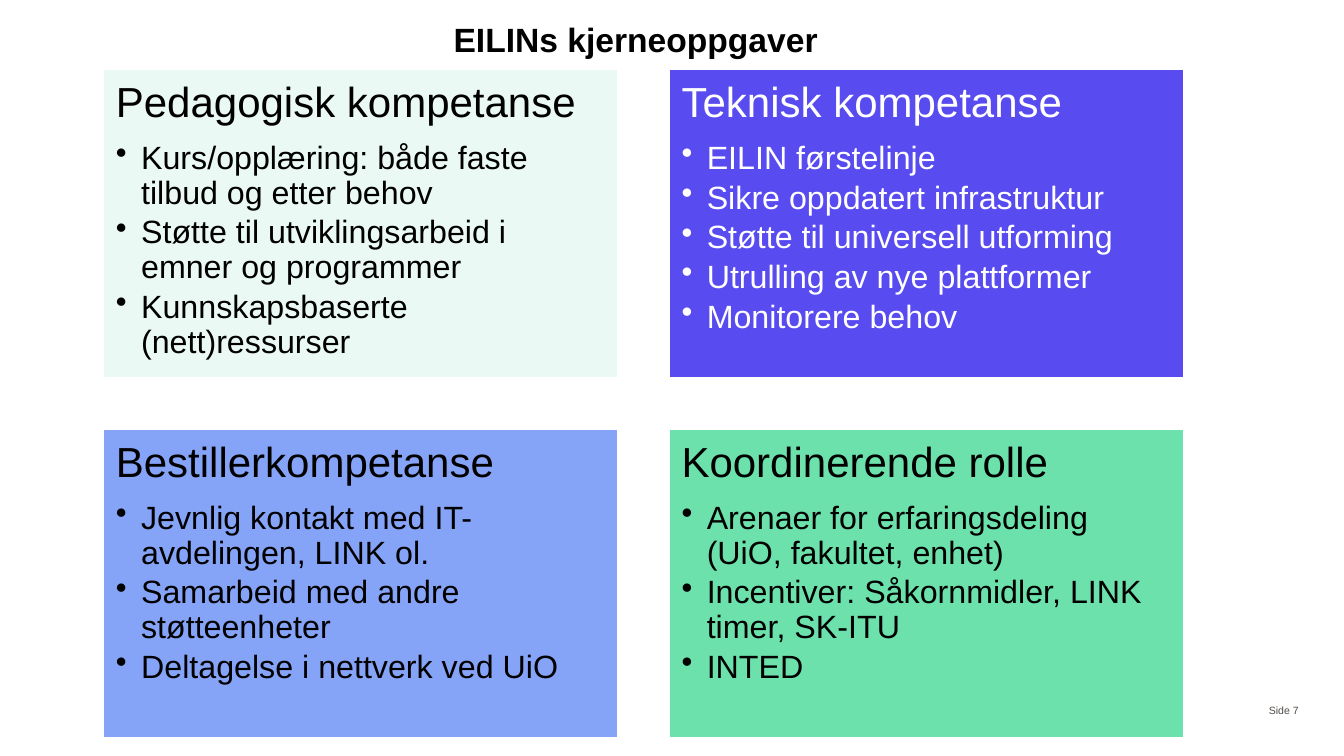
"""Build the slide showing the four core tasks of EILIN."""
import pptx
import pptx.util
import pptx.dml.color
import pptx.enum.shapes
import pptx.enum.text
import pptx.oxml.ns
from lxml import etree

Inches, Pt = pptx.util.Inches, pptx.util.Pt
RGBColor = pptx.dml.color.RGBColor
ALIGN = pptx.enum.text.PP_ALIGN
ANCHOR = pptx.enum.text.MSO_ANCHOR
RECTANGLE = pptx.enum.shapes.MSO_SHAPE.RECTANGLE

BLACK = RGBColor(0x00, 0x00, 0x00)
WHITE = RGBColor(0xFF, 0xFF, 0xFF)
GREY = RGBColor(0x52, 0x4B, 0x48)
MINT = RGBColor(0xEA, 0xF9, 0xF3)
VIOLET = RGBColor(0x58, 0x4B, 0xF0)
BLUE = RGBColor(0x86, 0xA4, 0xF7)
GREEN = RGBColor(0x6C, 0xE1, 0xAB)

HEADLINE = "EILINs kjerneoppgaver"
PAGE_LABEL = "Side 7"
TASKS = [
    ("Pedagogisk kompetanse", MINT, BLACK, [
        "Kurs/opplæring: både faste tilbud og etter behov",
        "Støtte til utviklingsarbeid i emner og programmer",
        "Kunnskapsbaserte (nett)ressurser",
    ]),
    ("Teknisk kompetanse", VIOLET, WHITE, [
        "EILIN førstelinje",
        "Sikre oppdatert infrastruktur",
        "Støtte til universell utforming",
        "Utrulling av nye plattformer",
        "Monitorere behov",
    ]),
    ("Bestillerkompetanse", BLUE, BLACK, [
        "Jevnlig kontakt med IT-avdelingen, LINK ol.",
        "Samarbeid med andre støtteenheter",
        "Deltagelse i nettverk ved UiO",
    ]),
    ("Koordinerende rolle", GREEN, BLACK, [
        "Arenaer for erfaringsdeling (UiO, fakultet, enhet)",
        "Incentiver: Såkornmidler, LINK timer, SK-ITU",
        "INTED",
    ]),
]

LEFT, TOP = 1.03, 0.69
CARD_WIDTH, CARD_HEIGHT, GAP = 5.1, 3.06, 0.51
INSET, INDENT = 0.12, 0.25


def place(part, left, top, width, height):
    part.left, part.top = Inches(left), Inches(top)
    part.width, part.height = Inches(width), Inches(height)


def write(paragraph, words, size, color, bold=False, align=ALIGN.LEFT):
    paragraph.alignment = align
    run = paragraph.add_run()
    run.text = words
    run.font.name, run.font.size, run.font.bold = "Arial", Pt(size), bold
    run.font.color.rgb = color


def add_bullet(paragraph):
    properties = paragraph._p.get_or_add_pPr()
    properties.set("marL", str(Inches(INDENT)))
    properties.set("indent", str(-Inches(INDENT)))
    bullet = etree.SubElement(properties, pptx.oxml.ns.qn("a:buChar"))
    bullet.set("char", "•")


def add_card(slide, index, heading, fill, ink, points):
    row, column = divmod(index, 2)
    card = slide.shapes.add_shape(RECTANGLE, 0, 0, 0, 0)
    place(card, LEFT + column * (CARD_WIDTH + GAP),
          TOP + row * (CARD_HEIGHT + GAP), CARD_WIDTH, CARD_HEIGHT)
    card.shadow.inherit = False
    card.fill.solid()
    card.fill.fore_color.rgb = fill
    card.line.color.rgb = WHITE
    card.line.width = Pt(1)
    frame = card.text_frame
    frame.word_wrap = True
    frame.vertical_anchor = ANCHOR.TOP
    frame.margin_left = frame.margin_right = Inches(INSET)
    frame.margin_top = frame.margin_bottom = Inches(INSET)
    title = frame.paragraphs[0]
    title.line_spacing, title.space_after = 0.9, Pt(10.5)
    write(title, heading, 30, ink)
    for point in points:
        item = frame.add_paragraph()
        item.level = 1
        item.line_spacing, item.space_after = 0.9, Pt(3.5)
        add_bullet(item)
        write(item, point, 23, ink)


def main():
    deck = pptx.Presentation()
    deck.slide_width, deck.slide_height = Inches(13.33), Inches(7.5)
    slide = deck.slides.add_slide(deck.slide_layouts[5])

    headline = slide.shapes.title
    place(headline, 2.83, 0.14, 6.95, 0.5)
    headline.text_frame.word_wrap = True
    headline.text_frame.vertical_anchor = ANCHOR.TOP
    write(headline.text_frame.paragraphs[0], HEADLINE, 24, BLACK, True, ALIGN.CENTER)

    for index, task in enumerate(TASKS):
        add_card(slide, index, *task)

    page = slide.shapes.add_textbox(0, 0, 0, 0)
    place(page, 12.32, 6.85, 0.66, 0.4)
    page.text_frame.word_wrap = True
    page.text_frame.vertical_anchor = ANCHOR.MIDDLE
    write(page.text_frame.paragraphs[0], PAGE_LABEL, 7.5, GREY, align=ALIGN.RIGHT)

    deck.save("out.pptx")


if __name__ == "__main__":
    main()
